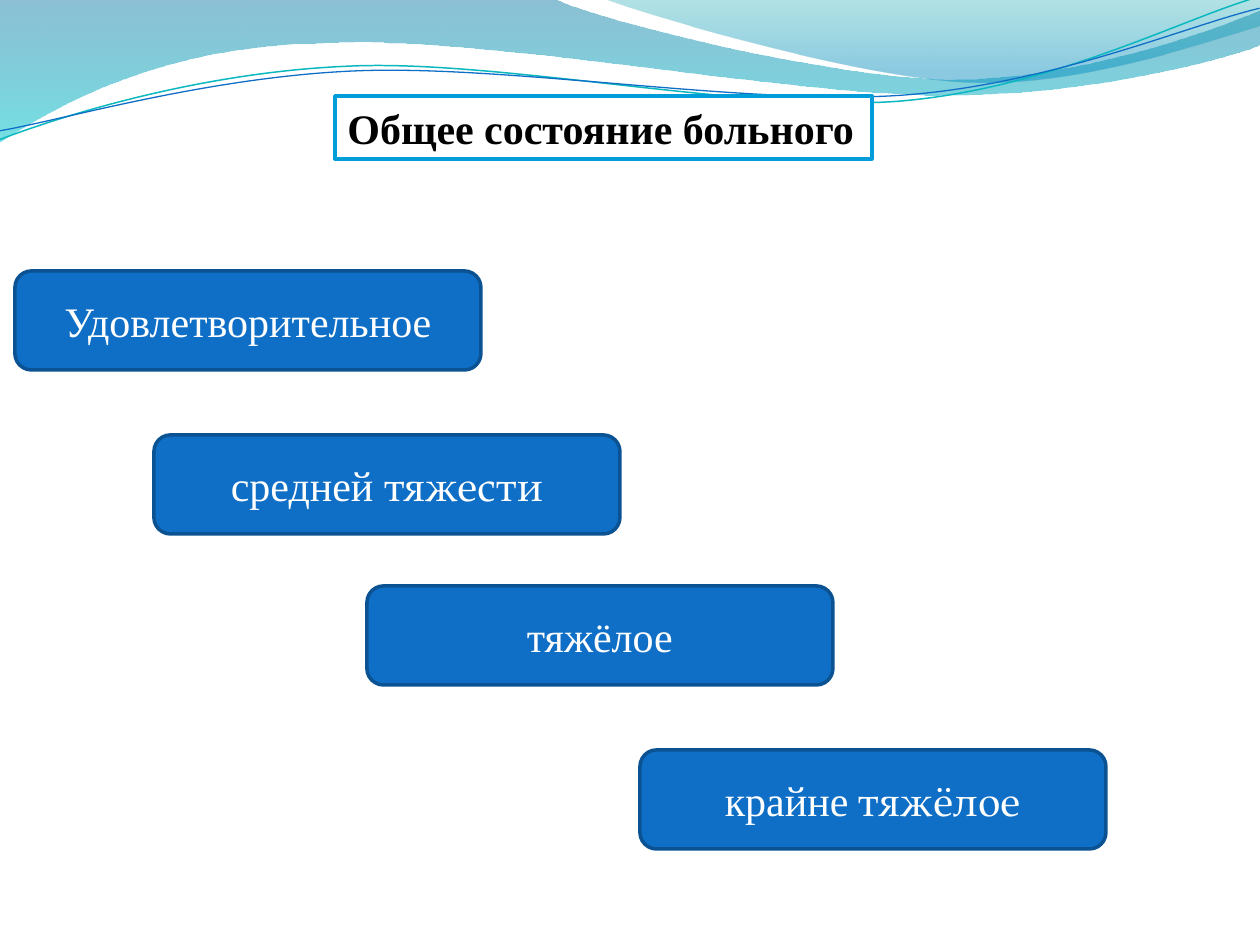
from lxml import etree
from pptx import Presentation
from pptx.dml.color import RGBColor
from pptx.enum import shapes, text
from pptx.oxml import ns
from pptx import util as u

PX = 914400 / 126
SERIF, PAGELLA = "Times New Roman", "TeX Gyre Pagella"
COLORS = {
    "white": "FFFFFF", "black": "000000", "cyan": "009DD9",
    "blue": "0F6FC6", "navy": "0B5292", "aqua": "0AB8BF",
    "deep": "0074A1", "turquoise": "00C6CF", "teal": "00A1A9", "azure": "008BBF",
}
WAVES = [
    {"start": (0, 0),
     "segments": [[(554, -1)],
                  [(600, 21), (837, 79), (955, 79)],
                  [(1075, 79), (1207, 33), (1260, 11)],
                  [(1261, 45)],
                  [(1238, 55), (1096, 96), (940, 95)],
                  [(784, 95), (481, 35), (324, 43)],
                  [(163, 45), (58, 105), (-1, 142)],
                  [(0, 0)]],
     "stops": [(0, "deep", 45), (1, "turquoise", 55)]},
    {"start": (604, -1),
     "segments": [[(641, 14), (859, 78), (969, 82)],
                  [(1079, 87), (1211, 40), (1260, 26)],
                  [(1260, 0)],
                  [(604, -1)]],
     "stops": [(0, "teal", 30), (0.8, "azure", 45)]},
]
STRANDS = [
    {"start": (-3, 110),
     "segments": [[(58, 90), (199, 52), (350, 53)],
                  [(499, 53), (745, 118), (896, 114)],
                  [(1049, 109), (1184, 45), (1260, 27)]],
     "color": "aqua", "width": 0.85},
    {"start": (-2, 101),
     "segments": [[(58, 94), (208, 57), (357, 58)],
                  [(509, 59), (751, 112), (902, 108)],
                  [(1052, 104), (1188, 52), (1262, 38)]],
     "color": "blue", "width": 0.75},
]
STATES = [
    (15, 271, [("Удовлетворительное", SERIF)]),
    (154, 435, [("средней", SERIF), (" тяжести", PAGELLA)]),
    (367, 586, [("тяжёлое", SERIF)]),
    (640, 750, [("крайне", SERIF), (" тяжёлое", PAGELLA)]),
]


def px(value):
    """Turn px into EMU."""
    return u.Emu(round(value * PX))


def rgb(name):
    """Look up a named colour."""
    return RGBColor.from_string(COLORS[name])


def apply(target, values):
    """Set every attribute listed in values."""
    for name, value in values.items():
        setattr(target, name, value)


def bend(shape, segments):
    """Join each three-point segment of an outline into one cubic curve."""
    lines = iter(list(shape._element.iter(ns.qn("a:lnTo"))))
    for segment in segments:
        parts = [next(lines) for _ in segment]
        if len(parts) == 3:
            cubic = etree.Element(ns.qn("a:cubicBezTo"))
            parts[0].addprevious(cubic)
            for part in parts:
                cubic.append(part[0])
                part.getparent().remove(part)


def add_curve(slide, left, top, curve, close):
    """Draw one curved outline from the given corner."""
    points = [curve["start"], *(point for segment in curve["segments"] for point in segment)]
    points = [(px(left + x), px(top + y)) for x, y in points]
    builder = slide.shapes.build_freeform(*points[0], scale=1.0)
    builder.add_line_segments(points[1:], close=close)
    shape = builder.convert_to_shape()
    bend(shape, curve["segments"])
    shape.shadow.inherit = False
    return shape


def add_wave(slide, left, top, wave):
    """Draw one translucent wave."""
    shape = add_curve(slide, left, top, wave, True)
    shape.line.fill.background()
    shape.fill.gradient()
    shape.fill.gradient_angle = 270
    for stop, (position, color, _) in zip(shape.fill.gradient_stops, wave["stops"]):
        stop.position = position
        stop.color.rgb = rgb(color)
    fills = shape._element.spPr.iter(ns.qn("a:srgbClr"))
    for fill, (_, _, opacity) in zip(fills, wave["stops"]):
        etree.SubElement(fill, ns.qn("a:alpha"), val=str(opacity * 1000))


def add_strand(slide, left, top, strand):
    """Draw one thin tilted strand."""
    shape = add_curve(slide, left, top, strand, False)
    shape.rotation = 357.3
    shape.fill.background()
    shape.line.color.rgb = rgb(strand["color"])
    shape.line.width = u.Pt(strand["width"])
    return shape


def add_header(slide, left, top):
    """Draw the waves and the group of strands."""
    for wave in WAVES:
        add_wave(slide, left, top, wave)
    strands = [add_strand(slide, left, top, strand) for strand in STRANDS]
    slide.shapes.add_group_shape(strands)


def add_box(slide, box, kind, fill, line, runs, font, frame, alignment):
    """Draw a filled, outlined box holding one paragraph."""
    shape = slide.shapes.add_shape(kind, *map(px, box))
    shape.shadow.inherit = False
    shape.fill.solid()
    shape.fill.fore_color.rgb = rgb(fill)
    shape.line.color.rgb = rgb(line)
    shape.line.width = u.Pt(2)
    apply(shape.text_frame, frame)
    paragraph = shape.text_frame.paragraphs[0]
    paragraph.alignment = alignment
    for words, typeface in runs:
        run = paragraph.add_run()
        run.text = words
        apply(run.font, {"name": typeface, "size": u.Pt(24), "bold": font["bold"]})
        run.font.color.rgb = rgb(font["color"])


def add_title(slide, left, top, width, height):
    """Place the framed heading."""
    add_box(slide, (left, top, width, height), shapes.MSO_SHAPE.RECTANGLE, "white", "cyan",
            [("Общее состояние больного", SERIF)], {"bold": True, "color": "black"},
            {"word_wrap": False, "auto_size": text.MSO_AUTO_SIZE.SHAPE_TO_FIT_TEXT,
             "vertical_anchor": text.MSO_ANCHOR.TOP}, text.PP_ALIGN.LEFT)


def add_state(slide, left, top, width, height, runs):
    """Place one step of the severity staircase."""
    add_box(slide, (left, top, width, height), shapes.MSO_SHAPE.ROUNDED_RECTANGLE,
            "blue", "navy", runs, {"bold": False, "color": "white"},
            {"word_wrap": True, "vertical_anchor": text.MSO_ANCHOR.MIDDLE},
            text.PP_ALIGN.CENTER)


def main():
    """Build and save the presentation."""
    presentation = Presentation()
    apply(presentation, {"slide_width": px(1260), "slide_height": px(945)})
    slide = presentation.slides.add_slide(presentation.slide_layouts[6])
    add_header(slide, 0, 0)
    add_title(slide, 335, 96, 537, 63)
    for left, top, runs in STATES:
        add_state(slide, left, top, 466, 99, runs)
    presentation.save("out.pptx")


if __name__ == "__main__":
    main()
